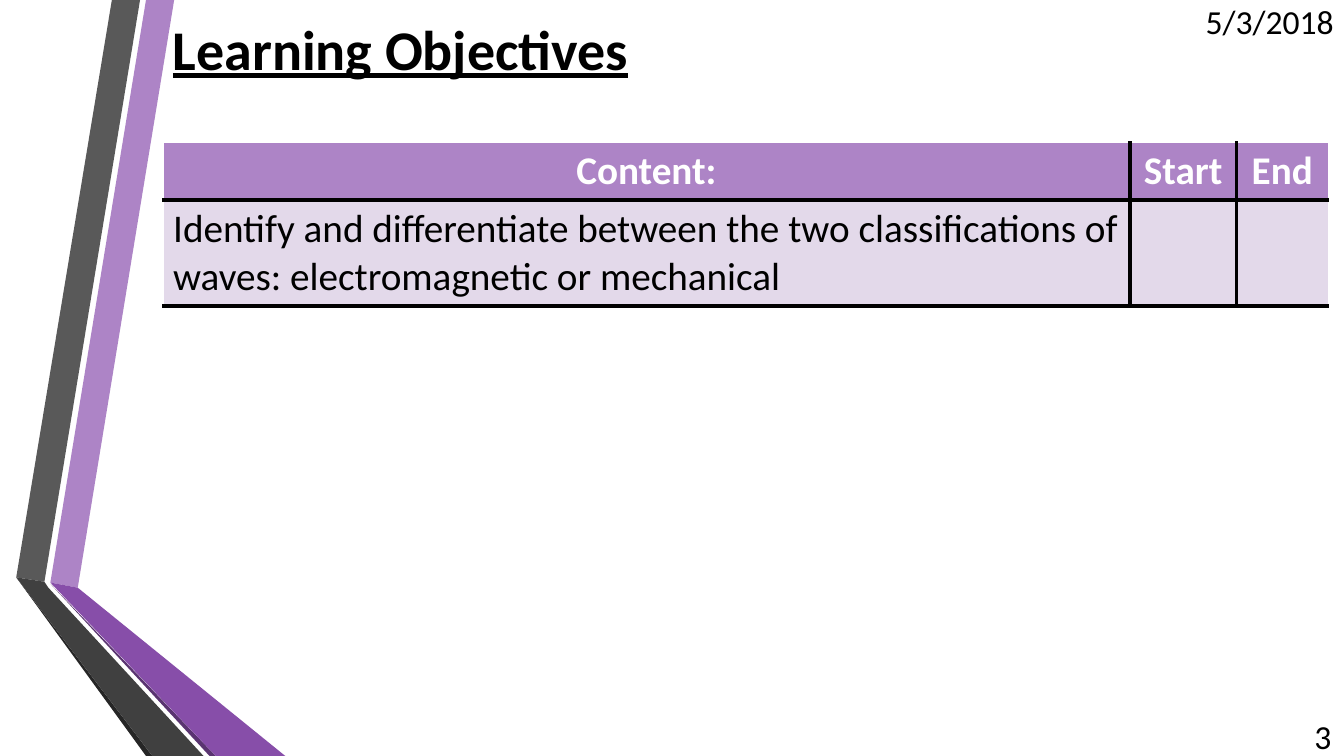
from dataclasses import dataclass

from lxml import etree
from pptx import Presentation
from pptx import util as u
from pptx.dml.color import RGBColor
from pptx.enum import text
from pptx.oxml import ns


@dataclass(frozen=True)
class Theme:
    font: str = "Calibri"
    black: str = "000000"
    white: str = "FFFFFF"
    lilac: str = "AD84C6"
    pale_lilac: str = "E3D9EA"
    purple: str = "874EA9"
    dark_purple: str = "5A3471"
    grey: str = "595959"
    dark_grey: str = "404040"
    charcoal: str = "262626"
    title_size: int = 40
    table_size: int = 28
    footer_size: int = 24
    border_width: int = 3


THEME = Theme()
ALIGN = text.PP_ALIGN
MIDDLE = text.MSO_ANCHOR.MIDDLE

RIBBONS = [
    (THEME.lilac, [(1.27, 14.68), (1.96, 14.81), (4.39, 0), (3.68, 0)]),
    (THEME.grey, [(3.53, 0), (2.82, 0), (0.41, 14.55), (1.12, 14.66)]),
    (THEME.charcoal, [(0.41, 14.55), (3.68, 19.05), (3.84, 19.05)]),
    (THEME.dark_purple, [(1.27, 14.71), (5.28, 19.05), (5.44, 19.05)]),
    (THEME.purple, [(1.27, 14.68), (5.44, 19.05), (7.19, 19.05), (1.96, 14.81)]),
    (THEME.dark_grey, [(0.41, 14.55), (3.84, 19.05), (5.13, 19.05), (1.22, 14.81), (1.12, 14.66)]),
]

COLUMN_WIDTHS = [24.36, 2.69, 2.31]
ROW_HEIGHTS = [1.46, 2.67]
ROWS = [
    ["Content:", "Start", "End"],
    ["Identify and differentiate between the two classifications of waves: "
     "electromagnetic or mechanical", "", ""],
]


def format_paragraph(paragraph, size, color, align, bold=False, underline=False):
    paragraph.alignment = align
    for run in paragraph.runs:
        run.font.name = THEME.font
        run.font.size = u.Pt(size)
        run.font.bold = bold
        run.font.underline = underline
        run.font.color.rgb = RGBColor.from_string(color)


def add_ribbon(slide, color, points):
    corners = [(u.Cm(x), u.Cm(y)) for x, y in points]
    builder = slide.shapes.build_freeform(*corners[0])
    builder.add_line_segments(corners[1:], close=True)
    shape = builder.convert_to_shape()
    shape.shadow.inherit = False
    shape.fill.solid()
    shape.fill.fore_color.rgb = RGBColor.from_string(color)
    shape.line.fill.background()


def add_label(slide, wording, left, top, width, height, size, align, **style):
    box = slide.shapes.add_textbox(u.Cm(left), u.Cm(top), u.Cm(width), u.Cm(height))
    frame = box.text_frame
    frame.word_wrap = True
    frame.vertical_anchor = MIDDLE
    frame.text = wording
    format_paragraph(frame.paragraphs[0], size, THEME.black, align, **style)


def set_borders(cell, sides):
    properties = cell._tc.get_or_add_tcPr()
    for position, side in enumerate(sides):
        line = etree.Element(ns.qn(f"a:ln{side}"), w=str(u.Pt(THEME.border_width)))
        fill = etree.SubElement(line, ns.qn("a:solidFill"))
        etree.SubElement(fill, ns.qn("a:srgbClr"), val=THEME.black)
        properties.insert(position, line)


def fill_cell(cell, wording, is_header):
    cell.fill.solid()
    cell.fill.fore_color.rgb = RGBColor.from_string(THEME.lilac if is_header else THEME.pale_lilac)
    cell.text = wording
    paragraph = cell.text_frame.paragraphs[0]
    if is_header:
        cell.vertical_anchor = MIDDLE
        format_paragraph(paragraph, THEME.table_size, THEME.white, ALIGN.CENTER, bold=True)
    else:
        format_paragraph(paragraph, THEME.table_size, THEME.black, ALIGN.LEFT)


def add_objectives_table(slide, left, top):
    frame = slide.shapes.add_table(
        len(ROWS), len(COLUMN_WIDTHS), u.Cm(left), u.Cm(top),
        u.Cm(sum(COLUMN_WIDTHS)), u.Cm(sum(ROW_HEIGHTS)))
    table = frame.table
    table.horz_banding = False
    for column, width in zip(table.columns, COLUMN_WIDTHS):
        column.width = u.Cm(width)
    last_column = len(COLUMN_WIDTHS) - 1
    for row_index, (row, height) in enumerate(zip(ROWS, ROW_HEIGHTS)):
        table.rows[row_index].height = u.Cm(height)
        for column_index, wording in enumerate(row):
            cell = table.cell(row_index, column_index)
            fill_cell(cell, wording, is_header=row_index == 0)
            drawn = {"L": column_index > 0, "R": column_index < last_column,
                     "T": row_index > 0, "B": True}
            set_borders(cell, [side for side, shown in drawn.items() if shown])


def main():
    presentation = Presentation()
    presentation.slide_width = u.Cm(33.87)
    presentation.slide_height = u.Cm(19.05)
    slide = presentation.slides.add_slide(presentation.slide_layouts[6])
    for color, points in RIBBONS:
        add_ribbon(slide, color, points)
    add_label(slide, "Learning Objectives", 4.11, 0.03, 27.84, 2.34,
              THEME.title_size, ALIGN.LEFT, bold=True, underline=True)
    add_label(slide, "5/3/2018", 29.36, 0.03, 4.5, 1.02, THEME.footer_size, ALIGN.RIGHT)
    add_label(slide, "3", 31.95, 18.03, 1.85, 1.02, THEME.footer_size, ALIGN.RIGHT)
    add_objectives_table(slide, 4.11, 3.58)
    presentation.save("out.pptx")


if __name__ == "__main__":
    main()
